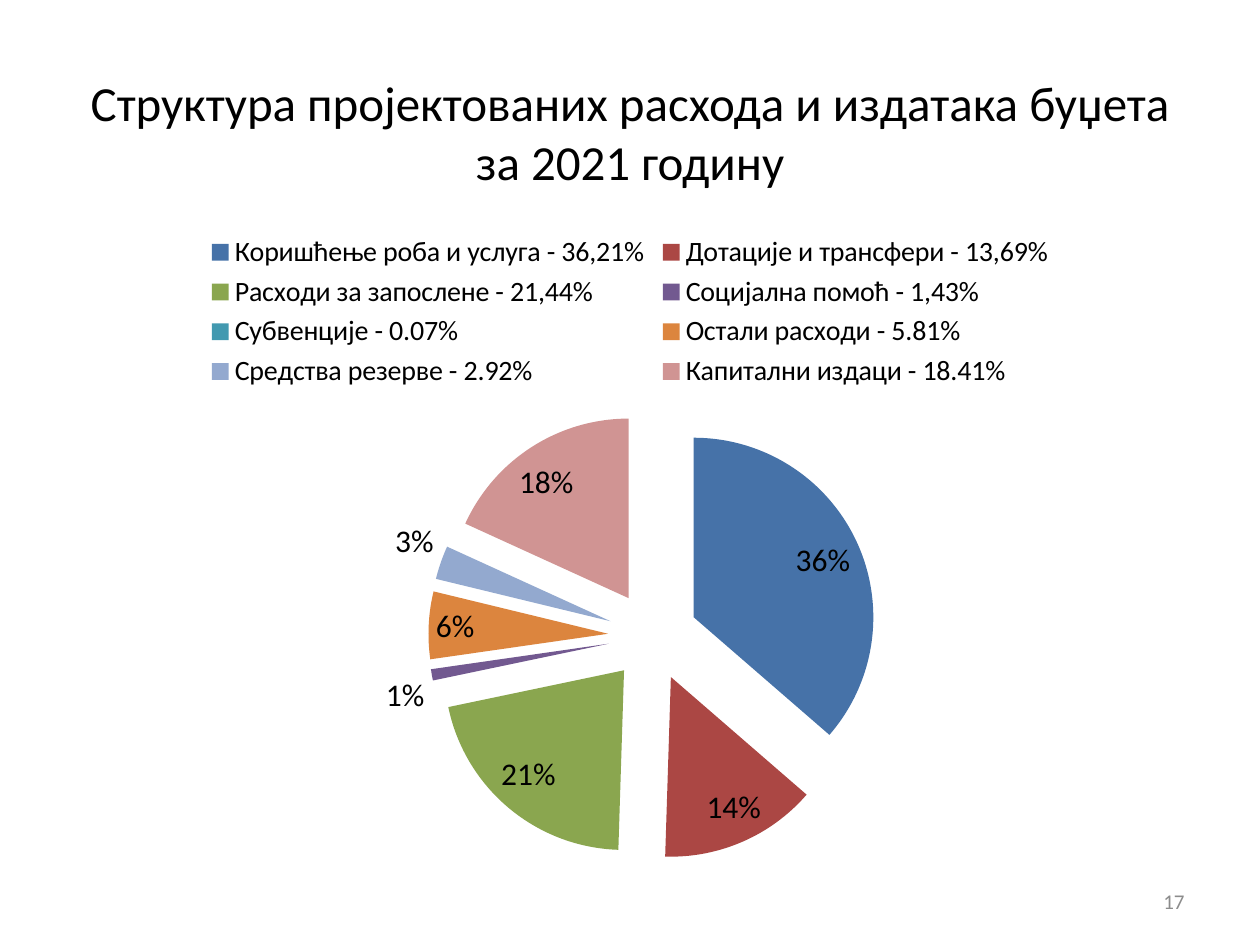
from lxml import etree
from pptx import Presentation
from pptx.chart.data import CategoryChartData
from pptx.dml.color import RGBColor
from pptx.enum.chart import XL_CHART_TYPE as ChartType, XL_LABEL_POSITION as LabelPosition, XL_LEGEND_POSITION as LegendPosition
from pptx.enum.text import MSO_ANCHOR as Anchor, PP_ALIGN as Align
from pptx.oxml.ns import qn
from pptx.util import Inches, Pt


def style(font, size, color="000000"):
    font.name = "Calibri"
    font.size = Pt(size)
    font.color.rgb = RGBColor.from_string(color)


def add_text(page, area, text, size, color, align):
    box = page.shapes.add_textbox(*map(Inches, area))
    frame = box.text_frame
    frame.word_wrap = True
    frame.vertical_anchor = Anchor.MIDDLE
    para = frame.paragraphs[0]
    para.text = text
    para.alignment = align
    style(para.font, size, color)


deck = Presentation()
deck.slide_width, deck.slide_height = Inches(10), Inches(7.5)
page = deck.slides.add_slide(deck.slide_layouts[6])

add_text(page, (0.5, 0.58, 9, 0.92),
         "Структура пројектованих расхода и издатака буџета за 2021 годину",
         28, "000000", Align.CENTER)

expenses = [
    ("Коришћење роба и услуга - 36,21%", 36, "4672A8"),
    ("Дотације и трансфери - 13,69%", 14, "AB4744"),
    ("Расходи за запослене - 21,44%", 21, "8AA64F"),
    ("Социјална помоћ - 1,43%", 1, "725990"),
    ("Субвенције - 0.07%", 0, "4299B0"),
    ("Остали расходи - 5.81%", 6, "DC853E"),
    ("Средства резерве - 2.92%", 3, "93A9CF"),
    ("Капитални издаци - 18.41%", 18, "D09493"),
]
names, shares, colors = zip(*expenses)
data = CategoryChartData()
data.categories = names
data.add_series("Series 1", shares)
chart = page.shapes.add_chart(
    ChartType.PIE, Inches(0.5), Inches(1.75), Inches(9), Inches(5.5), data).chart
style(chart.font, 18)
chart.has_title = False
chart.has_legend = True
chart.legend.position = LegendPosition.TOP
chart.legend.include_in_layout = False
style(chart.legend.font, 16)

plot = chart.plots[0]
plot.vary_by_categories = True
series = plot.series[0]
for index, color in enumerate(colors):
    fill = series.points[index].format.fill
    fill.solid()
    fill.fore_color.rgb = RGBColor.from_string(color)
for slice_xml in series._element.findall(qn("c:dPt")):
    explosion = etree.Element(qn("c:explosion"), val="25")
    slice_xml.find(qn("c:spPr")).addprevious(explosion)

labels = series.data_labels
labels.show_value = False
labels.show_percentage = True
labels.number_format = "0%"
labels.number_format_is_linked = False
labels.position = LabelPosition.BEST_FIT
style(labels.font, 18)
for leader_xml in series._element.iter(qn("c:showLeaderLines")):
    leader_xml.set("val", "0")

add_text(page, (7.17, 6.95, 2.33, 0.4), "17", 12, "8C8C8C", Align.RIGHT)

deck.save("out.pptx")
